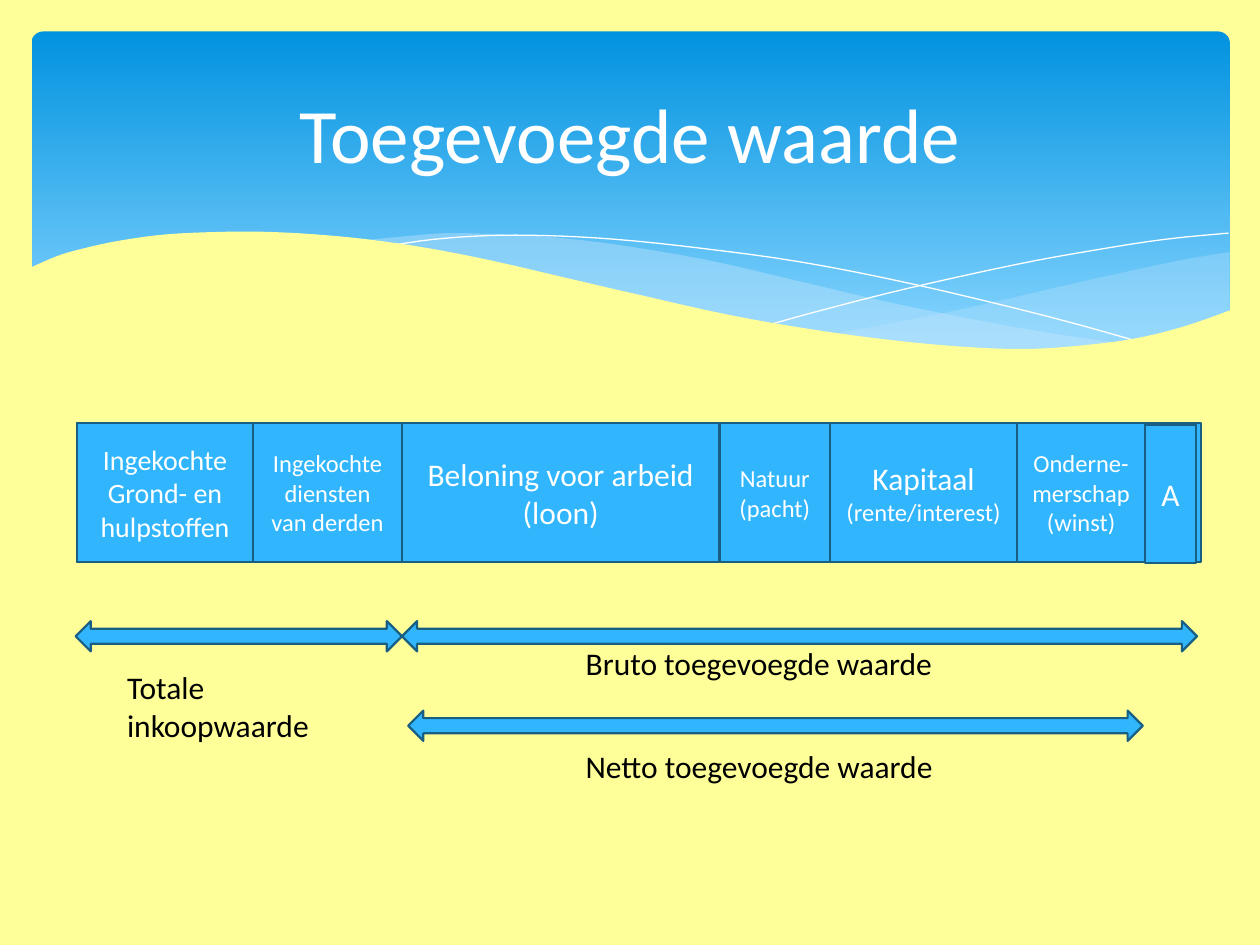
from dataclasses import dataclass

import pptx
import pptx.dml.color
import pptx.enum.shapes
import pptx.enum.text
import pptx.oxml.ns
import pptx.util
from lxml import etree

Inches = pptx.util.Inches
Pt = pptx.util.Pt
RGB = pptx.dml.color.RGBColor.from_string
Shape = pptx.enum.shapes.MSO_SHAPE
Align = pptx.enum.text.PP_ALIGN
Anchor = pptx.enum.text.MSO_ANCHOR
Point = tuple[float, float]


@dataclass(frozen=True)
class Theme:
    font: str = "Calibri"
    background: str = "FFFF99"
    banner_top: str = "0293E0"
    banner_bottom: str = "83D3FE"
    wave: str = "C6E7FC"
    block: str = "31B6FD"
    outline: str = "195F84"
    light: str = "FFFFFF"
    dark: str = "000000"
    title: int = 44
    body: int = 18
    medium: int = 16
    small: int = 14


THEME = Theme()


@dataclass(frozen=True)
class Line:
    text: str
    size: int = THEME.body


@dataclass(frozen=True)
class Box:
    left: float
    top: float
    width: float
    height: float

    def lengths(self) -> tuple:
        return tuple(Inches(v) for v in (self.left, self.top, self.width, self.height))


@dataclass(frozen=True)
class Segment:
    """One part of the value bar, from left to the start of the next part."""
    left: float
    right: float
    lines: tuple[Line, ...] = ()
    top: float = 3.36


@dataclass(frozen=True)
class Curve:
    """Smooth runs of points, joined one after the other."""
    runs: tuple[tuple[Point, ...], ...]
    fill: str | None = None
    opacity: int = 100


SEGMENTS = (
    Segment(0.61, 9.53),
    Segment(0.61, 2.01, (Line("Ingekochte", THEME.medium),
                         Line("Grond- en hulpstoffen", THEME.medium))),
    Segment(2.01, 3.19, (Line("Ingekochte diensten van derden", THEME.small),)),
    Segment(3.19, 5.71, (Line("Beloning voor arbeid"), Line("(loon)"))),
    Segment(5.71, 6.59, (Line("Natuur", THEME.small), Line("(pacht)", THEME.small))),
    Segment(6.59, 8.07, (Line("Kapitaal"), Line("(rente/interest)", THEME.small))),
    Segment(8.07, 9.09, (Line("Onderne-merschap (winst)", THEME.small),)),
    Segment(9.09, 9.49, (Line("A"),), top=3.37),
)
SEGMENT_HEIGHT = 1.1

ARROWS = (Box(0.6, 4.93, 2.59, 0.24), Box(3.19, 4.93, 6.31, 0.24), Box(3.24, 5.64, 5.83, 0.24))

CAPTIONS = (
    (Box(0.91, 5.25, 2.05, 0.71), "Totale inkoopwaarde"),
    (Box(4.55, 5.06, 4.65, 0.4), "Bruto toegevoegde waarde"),
    (Box(4.55, 5.88, 3.6, 0.4), "Netto toegevoegde waarde"),
)

CURVES = (
    Curve((
        ((9.76, 2), (9.35, 2.07), (8.61, 2.23), (7.79, 2.42), (7.06, 2.57), (6.61, 2.65)),
        ((6.61, 2.65), (7.05, 2.71), (7.57, 2.76), (8.03, 2.78), (8.44, 2.77),
         (8.81, 2.73), (9.21, 2.65), (9.49, 2.57), (9.76, 2.47)),
    ), THEME.wave, 29),
    Curve((
        ((8.93, 2.73), (8.37, 2.65), (7.75, 2.54), (7.06, 2.4), (6.29, 2.22), (5.69, 2.08),
         (5.14, 1.98), (4.65, 1.91), (4.2, 1.87), (3.61, 1.85), (3.28, 1.87), (2.86, 1.91)),
        ((2.86, 1.91), (3.42, 1.99), (4.04, 2.11), (4.49, 2.22), (5.3, 2.4), (6.01, 2.55),
         (6.65, 2.66), (7.22, 2.74), (7.73, 2.77), (8.18, 2.78), (8.57, 2.77), (8.93, 2.73)),
    ), THEME.wave, 40),
    Curve((
        ((3.09, 1.95), (3.44, 1.9), (3.87, 1.87), (4.33, 1.87), (4.89, 1.9), (5.56, 1.97),
         (6.36, 2.08), (7.27, 2.26), (8.31, 2.51), (9.07, 2.72)),
    )),
    Curve((
        ((6.13, 2.57), (6.53, 2.46), (7.2, 2.29), (8.06, 2.1), (8.66, 1.99), (9.24, 1.9),
         (9.75, 1.85)),
    )),
    Curve((
        ((9.77, 2.46), (9.4, 2.59), (8.99, 2.69), (8.5, 2.75), (8.09, 2.77), (7.61, 2.75),
         (7.08, 2.7), (6.48, 2.62), (5.79, 2.5), (5.03, 2.33), (4.47, 2.2), (3.91, 2.07),
         (3.4, 1.97), (2.92, 1.9), (2.5, 1.86), (2.11, 1.84), (1.77, 1.84), (1.32, 1.86),
         (0.95, 1.91), (0.67, 1.97), (0.46, 2.03), (0.23, 2.13)),
        ((0.23, 3.29), (9.77, 3.29)),
    ), THEME.background),
)


def smooth(points: tuple[Point, ...], steps: int = 4) -> list[Point]:
    """Catmull-Rom spline through the points; two points stay a straight line."""
    if len(points) < 3:
        return list(points)
    padded = (points[0], *points, points[-1])
    result = [points[0]]
    for a, b, c, d in zip(padded, padded[1:], padded[2:], padded[3:]):
        for step in range(1, steps + 1):
            t = step / steps
            result.append(tuple(
                (2 * q + (r - p) * t + (2 * p - 5 * q + 4 * r - s) * t ** 2
                 + (3 * q - p - 3 * r + s) * t ** 3) / 2
                for p, q, r, s in zip(a, b, c, d)))
    return result


def draw_curve(slide, curve: Curve) -> None:
    vertices = [(Inches(x), Inches(y)) for run in curve.runs for x, y in smooth(run)]
    builder = slide.shapes.build_freeform(*vertices[0])
    builder.add_line_segments(vertices[1:], close=curve.fill is not None)
    outline = builder.convert_to_shape()
    outline.shadow.inherit = False
    if curve.fill is None:
        outline.fill.background()
        outline.line.color.rgb = RGB(THEME.light)
        outline.line.width = Pt(0)
        return
    outline.line.fill.background()
    outline.fill.solid()
    outline.fill.fore_color.rgb = RGB(curve.fill)
    if curve.opacity < 100:
        color = outline.fill._xPr.find(".//" + pptx.oxml.ns.qn("a:srgbClr"))
        etree.SubElement(color, pptx.oxml.ns.qn("a:alpha"), val=str(curve.opacity * 1000))


def draw_banner(slide) -> None:
    banner = slide.shapes.add_shape(Shape.ROUNDED_RECTANGLE, *Box(0.25, 0.25, 9.51, 2.7).lengths())
    banner.adjustments[0] = 0.01
    banner.adjustments[0] = 0.034
    banner.shadow.inherit = False
    banner.line.fill.background()
    banner.fill.gradient()
    banner.fill.gradient_angle = 270
    stops = ((0, THEME.banner_top), (0.9, THEME.banner_bottom))
    for stop, (position, color) in zip(banner.fill.gradient_stops, stops):
        stop.position = position
        stop.color.rgb = RGB(color)


def write(frame, lines: tuple[Line, ...], color: str, align, anchor) -> None:
    frame.word_wrap = True
    frame.vertical_anchor = anchor
    for index, line in enumerate(lines):
        paragraph = frame.paragraphs[0] if index == 0 else frame.add_paragraph()
        paragraph.alignment = align
        run = paragraph.add_run()
        run.text = line.text
        run.font.name = THEME.font
        run.font.size = Pt(line.size)
        run.font.color.rgb = RGB(color)


def draw_block(slide, kind, box: Box, lines: tuple[Line, ...] = ()) -> None:
    block = slide.shapes.add_shape(kind, *box.lengths())
    block.shadow.inherit = False
    block.fill.solid()
    block.fill.fore_color.rgb = RGB(THEME.block)
    block.line.color.rgb = RGB(THEME.outline)
    block.line.width = Pt(1.25)
    write(block.text_frame, lines, THEME.light, Align.CENTER, Anchor.MIDDLE)


def draw_text(slide, box: Box, line: Line, color: str, align=Align.LEFT, anchor=Anchor.TOP) -> None:
    frame = slide.shapes.add_textbox(*box.lengths()).text_frame
    write(frame, (line,), color, align, anchor)


def main() -> None:
    deck = pptx.Presentation()
    deck.slide_width, deck.slide_height = Inches(10), Inches(7.5)
    slide = deck.slides.add_slide(deck.slide_layouts[6])
    slide.background.fill.solid()
    slide.background.fill.fore_color.rgb = RGB(THEME.background)
    draw_banner(slide)
    for curve in CURVES:
        draw_curve(slide, curve)
    draw_text(slide, Box(0.5, 0.37, 9, 1.37), Line("Toegevoegde waarde", THEME.title),
              THEME.light, Align.CENTER, Anchor.MIDDLE)
    for part in SEGMENTS:
        box = Box(part.left, part.top, part.right - part.left, SEGMENT_HEIGHT)
        draw_block(slide, Shape.RECTANGLE, box, part.lines)
    for arrow in ARROWS:
        draw_block(slide, Shape.LEFT_RIGHT_ARROW, arrow)
    for box, caption in CAPTIONS:
        draw_text(slide, box, Line(caption), THEME.dark)
    deck.save("out.pptx")


if __name__ == "__main__":
    main()
